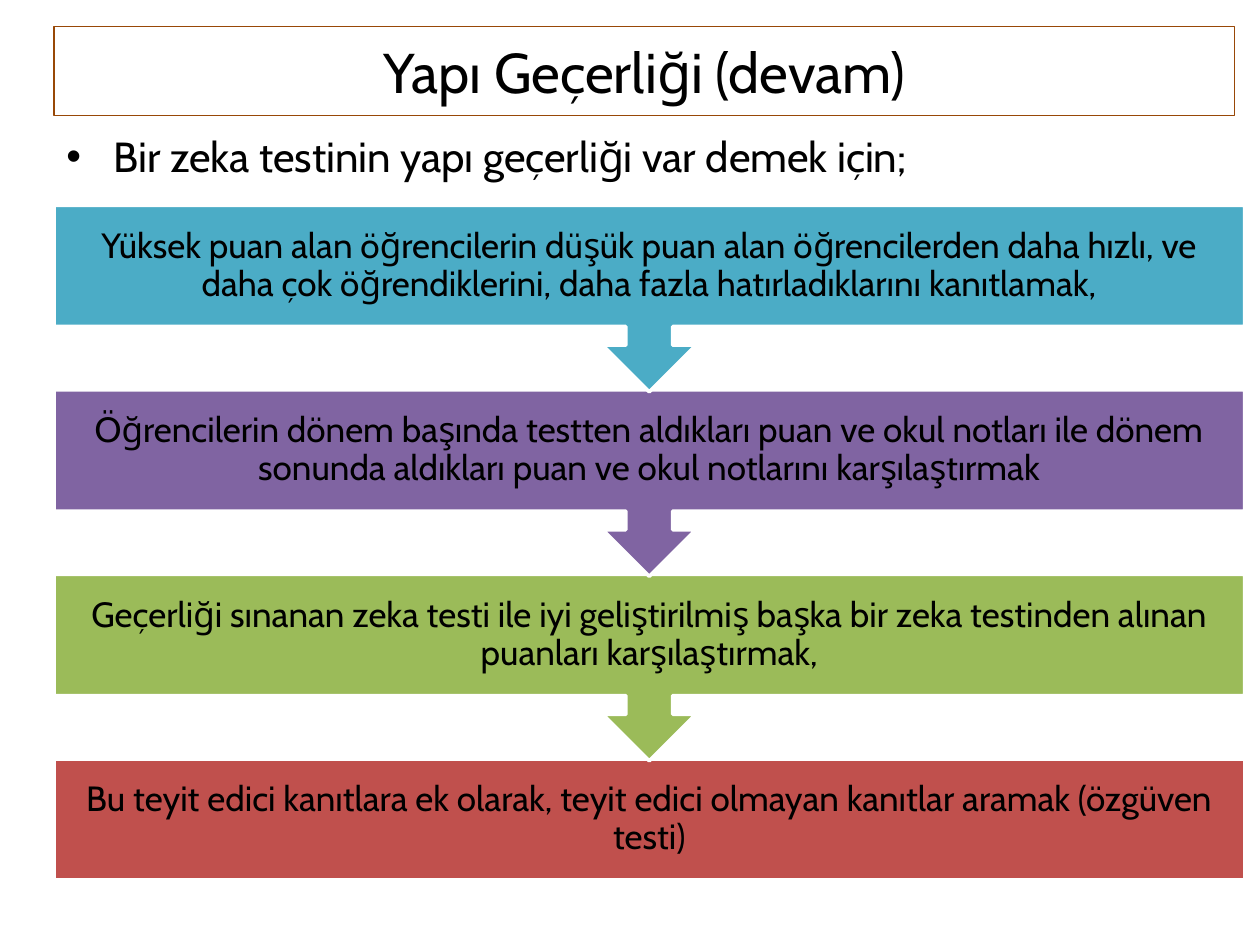
import pptx
import pptx.util
import pptx.dml.color
import pptx.enum.shapes
import pptx.enum.text
import lxml.etree

Cm, Pt = pptx.util.Cm, pptx.util.Pt
KIND = pptx.enum.shapes.MSO_SHAPE
ALIGN = pptx.enum.text.PP_ALIGN
MIDDLE = pptx.enum.text.MSO_ANCHOR.MIDDLE

HUES = {
    "black": "000000", "white": "FFFFFF", "brown": "984807",
    "teal": "4BACC6", "purple": "8064A2", "green": "9BBB59", "red": "C0504D",
}


def color(name):
    return pptx.dml.color.RGBColor.from_string(HUES[name])


class Deck:
    font = "Cabin"
    left = 1.09

    def __init__(self):
        self.show = pptx.Presentation()
        self.show.slide_width, self.show.slide_height = Cm(25.4), Cm(19.05)
        self.slide = self.show.slides.add_slide(self.show.slide_layouts[6])

    def label(self, shape, text, size, align):
        frame = shape.text_frame
        frame.word_wrap = True
        para = frame.paragraphs[0]
        para.text = text
        para.alignment = align
        para.font.name = self.font
        para.font.size = Pt(size)
        para.font.color.rgb = color("black")

    def box(self, kind, top, width, height, text, size, line, weight, fill=None):
        shape = self.slide.shapes.add_shape(
            kind, Cm(self.left), Cm(top), Cm(width), Cm(height))
        shape.shadow.inherit = False
        if fill:
            shape.fill.solid()
            shape.fill.fore_color.rgb = color(fill)
        else:
            shape.fill.background()
        shape.line.color.rgb = color(line)
        shape.line.width = Pt(weight)
        shape.text_frame.vertical_anchor = MIDDLE
        self.label(shape, text, size, ALIGN.CENTER)
        return shape

    def step(self, kind, top, height, text, fill):
        shape = self.box(kind, top, 24, height, text, 20, "white", 2, fill)
        frame = shape.text_frame
        frame.margin_left = frame.margin_right = Cm(0.4)
        frame.margin_top = frame.margin_bottom = Cm(0.4)
        frame.paragraphs[0].line_spacing = 0.9

    def bullet(self, top, width, height, text):
        shape = self.slide.shapes.add_textbox(
            Cm(self.left), Cm(top), Cm(width), Cm(height))
        para = shape.text_frame.paragraphs[0]
        props = para._p.get_or_add_pPr()
        props.set("marL", str(Cm(0.95)))
        props.set("indent", str(-Cm(0.95)))
        space = "{http://schemas.openxmlformats.org/drawingml/2006/main}"
        lxml.etree.SubElement(props, space + "buFont", typeface="Arial")
        lxml.etree.SubElement(props, space + "buChar", char="•")
        self.label(shape, text, 24, ALIGN.LEFT)


STEPS = [
    ("teal", "Yüksek puan alan öğrencilerin düşük puan alan öğrencilerden daha "
     "hızlı, ve daha çok öğrendiklerini, daha fazla hatırladıklarını kanıtlamak,"),
    ("purple", "Öğrencilerin dönem başında testten aldıkları puan ve okul notları "
     "ile dönem sonunda aldıkları puan ve okul notlarını karşılaştırmak"),
    ("green", "Geçerliği sınanan zeka testi ile iyi geliştirilmiş başka bir zeka "
     "testinden alınan puanları karşılaştırmak,"),
    ("red", "Bu teyit edici kanıtlara ek olarak, teyit edici olmayan kanıtlar "
     "aramak (özgüven testi)"),
]


def main():
    deck = Deck()

    # Steps, drawn from the last up so each arrow tip lies over the next box
    first, pitch = 4.14, 3.72
    last = len(STEPS) - 1
    for row in range(last, -1, -1):
        fill, text = STEPS[row]
        kind, height = ((KIND.RECTANGLE, 2.44) if row == last
                        else (KIND.DOWN_ARROW_CALLOUT, 3.76))
        deck.step(kind, first + row * pitch, height, text, fill)

    # Title and lead line
    deck.box(KIND.RECTANGLE, 0.53, 23.8, 1.8, "Yapı Geçerliği (devam)",
             32, "brown", 0.75)
    deck.bullet(2.51, 23.8, 1.57, "Bir zeka testinin yapı geçerliği var demek için;")

    deck.show.save("out.pptx")


if __name__ == "__main__":
    main()
